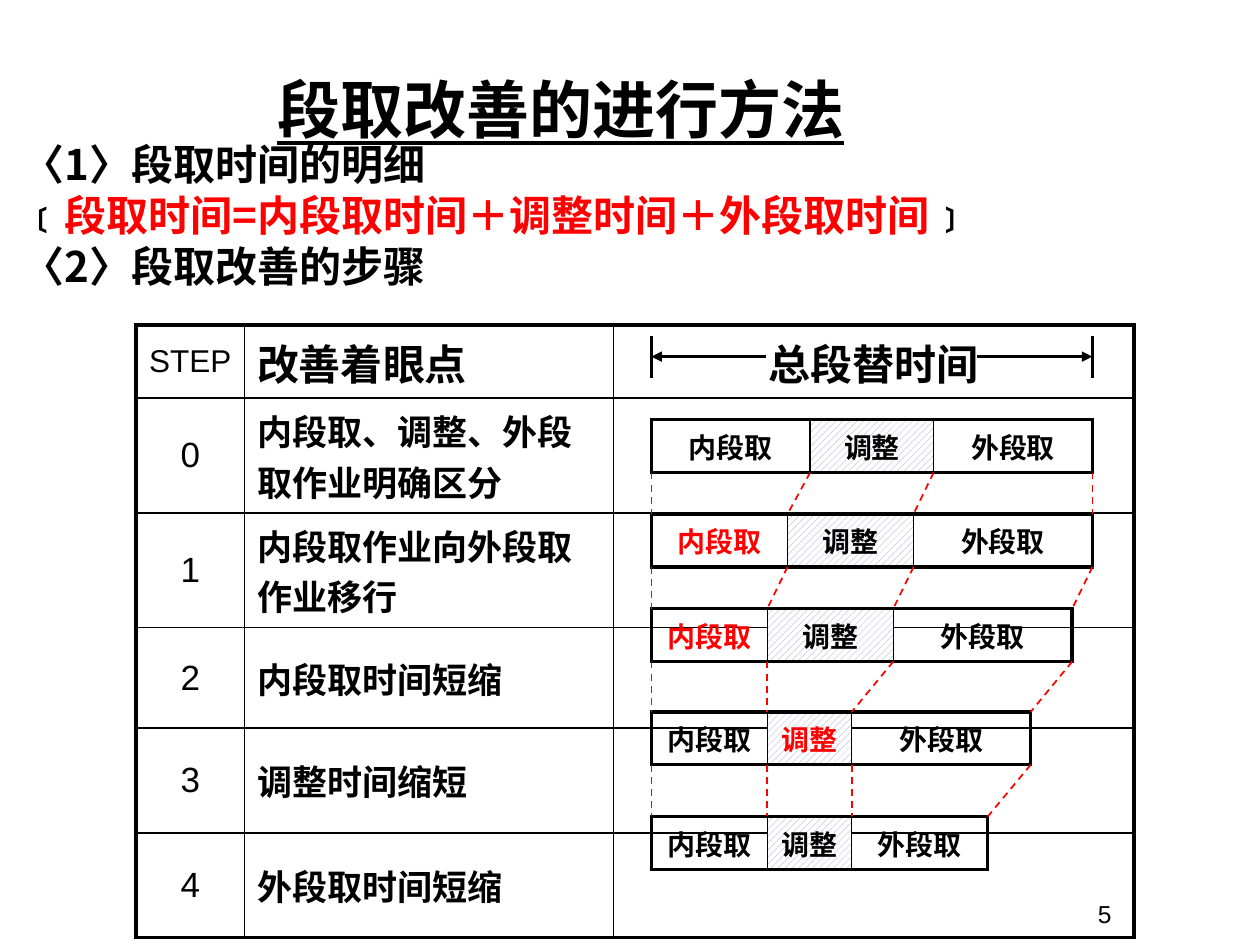
"""Build the slide on the steps of changeover improvement."""
from itertools import accumulate
from lxml import etree
from pptx import Presentation
from pptx import util as u
from pptx.dml.color import RGBColor
from pptx.enum import dml, shapes, text
from pptx.oxml import ns

BLACK = RGBColor(0, 0, 0)
RED = RGBColor(255, 0, 0)
WHITE = RGBColor(255, 255, 255)
HATCH = RGBColor(0x99, 0x99, 0xCC)
SANS, CJK = "Arial", "Noto Sans CJK SC"
NO_GRID = "{2D5ABB26-0587-4C30-8999-92F81FD0307C}"
LEFT, MID, RIGHT = text.PP_ALIGN.LEFT, text.PP_ALIGN.CENTER, text.PP_ALIGN.RIGHT

TITLE = "段取改善的进行方法"
INTRO = [
    [("〈1〉段取时间的明细", BLACK)],
    [("﹝", BLACK), ("段取时间=内段取时间＋调整时间＋外段取时间", RED), ("﹞", BLACK)],
    [("〈2〉段取改善的步骤", BLACK)],
]
HEAD = ("STEP", "改善着眼点", "总段替时间")
STEPS = [
    "内段取、调整、外段取作业明确区分",
    "内段取作业向外段取作业移行",
    "内段取时间短缩",
    "调整时间缩短",
    "外段取时间短缩",
]
COLS = (0.86, 2.93, 4.13)
ROWS = (0.58, 0.91, 0.91, 0.8, 0.83, 0.83)
PARTS = ("内段取", "调整", "外段取")
BARS = [
    (3.33, (1.26, 0.98, 1.26), None),
    (4.08, (1.08, 1, 1.42), 0),
    (4.83, (0.92, 1, 1.42), 0),
    (5.65, (0.92, 0.67, 1.42), 1),
    (6.48, (0.92, 0.67, 1.08), None),
]
BAR_X, BAR_H = 5.17, 0.42
SPAN_END, SPAN_Y = 8.67, 2.83


def write(frame, lines, size, font=SANS, bold=False, line=False, align=LEFT,
          anchor=text.MSO_ANCHOR.MIDDLE, gap=0, pitch=None):
    """Fill a text frame with lines of (words, colour) runs."""
    frame.word_wrap = True
    frame.vertical_anchor = anchor
    for i, runs in enumerate(lines):
        para = frame.paragraphs[0] if i == 0 else frame.add_paragraph()
        para.alignment = align
        if pitch:
            para.line_spacing = pitch
        if i:
            para.space_before = u.Pt(gap)
        for words, color in runs:
            run = para.add_run()
            run.text = words
            run.font.size, run.font.bold = u.Pt(size), bold
            run.font.underline = line
            run.font.color.rgb = color
            run.font.name = font
            far = etree.SubElement(run.font._element, ns.qn("a:ea"))
            far.set("typeface", CJK)


def edge(cell, side, width):
    """Draw one black border of a cell."""
    props = cell._tc.get_or_add_tcPr()
    rule = etree.SubElement(props, ns.qn("a:ln" + side), w=str(u.Pt(width)))
    fill = etree.SubElement(rule, ns.qn("a:solidFill"))
    etree.SubElement(fill, ns.qn("a:srgbClr"), val=str(BLACK))


def grid(slide, x, y, cols, rows):
    """Add an unfilled table with a thick frame and thin inner rules."""
    size = [u.Inches(v) for v in (x, y, sum(cols), sum(rows))]
    frame = slide.shapes.add_table(len(rows), len(cols), *size)
    table = frame.table
    table.first_row = table.horz_banding = False
    frame._element.find(".//" + ns.qn("a:tableStyleId")).text = NO_GRID
    for c, width in enumerate(cols):
        table.columns[c].width = u.Inches(width)
    for r, height in enumerate(rows):
        table.rows[r].height = u.Inches(height)
        for c in range(len(cols)):
            cell = table.cell(r, c)
            cell.vertical_anchor = text.MSO_ANCHOR.MIDDLE
            outer = {"L": c == 0, "R": c == len(cols) - 1,
                     "T": r == 0, "B": r == len(rows) - 1}
            for side, thick in outer.items():
                edge(cell, side, 2.25 if thick else 1)
            cell.fill.background()
    return table


def link(slide, start, end, color=BLACK, width=1.5, dash=False, arrow=False):
    """Add a straight line between two points."""
    ends = [u.Inches(v) for v in (*start, *end)]
    conn = slide.shapes.add_connector(shapes.MSO_CONNECTOR.STRAIGHT, *ends)
    conn.line.color.rgb, conn.line.width = color, u.Pt(width)
    if dash:
        conn.line.dash_style = dml.MSO_LINE.DASH
    if arrow:
        etree.SubElement(conn.line._get_or_add_ln(), ns.qn("a:tailEnd"), type="triangle")
    etree.SubElement(conn._element.spPr, ns.qn("a:effectLst"))


def box(slide, *place):
    """Add a text box and give its frame."""
    return slide.shapes.add_textbox(*[u.Inches(v) for v in place]).text_frame


def main():
    """Lay out and save the slide."""
    deck = Presentation()
    deck.slide_width, deck.slide_height = u.Inches(10), u.Inches(7.5)
    slide = deck.slides.add_slide(deck.slide_layouts[5])

    title = slide.shapes.title
    title.left, title.top = u.Inches(2.1), u.Inches(0.5)
    title.width, title.height = u.Inches(5.79), u.Inches(0.72)
    write(title.text_frame, [[(TITLE, BLACK)]], 36, font=CJK, bold=True, line=True)

    write(box(slide, 6.42, 6.9, 2.5, 0.52), [[("5", BLACK)]], 14, align=RIGHT,
          anchor=text.MSO_ANCHOR.BOTTOM)

    table = grid(slide, 1.08, 2.58, COLS, ROWS)
    for c, (words, size, align) in enumerate(zip(HEAD, (18, 24, 24), (MID, LEFT, MID))):
        write(table.cell(0, c).text_frame, [[(words, BLACK)]], size, bold=c > 0, align=align)
    for n, words in enumerate(STEPS):
        write(table.cell(n + 1, 0).text_frame, [[(str(n), BLACK)]], 20, align=MID)
        write(table.cell(n + 1, 1).text_frame, [[(words, BLACK)]], 20, bold=True)

    for top, widths, hot in BARS:
        bar = grid(slide, BAR_X, top, widths, [BAR_H])
        for c, words in enumerate(PARTS):
            color = RED if c == hot else BLACK
            write(bar.cell(0, c).text_frame, [[(words, color)]], 16, bold=True, align=MID)
        fill = bar.cell(0, 1).fill
        fill.patterned()
        fill.pattern = dml.MSO_PATTERN.WIDE_UPWARD_DIAGONAL
        fill.fore_color.rgb, fill.back_color.rgb = HATCH, WHITE

    for x, inner in ((BAR_X, 6.08), (SPAN_END, 7.75)):
        link(slide, (x, 2.67), (x, 3))
        link(slide, (inner, SPAN_Y), (x, SPAN_Y), arrow=True)
    for (top, wide, _), (low, next_wide, _) in zip(BARS, BARS[1:]):
        marks = zip(accumulate(wide, initial=BAR_X), accumulate(next_wide, initial=BAR_X))
        for a, b in marks:
            link(slide, (a, top + BAR_H), (b, low), color=RED, width=1, dash=True)

    intro = box(slide, 0.08, 1.08, 9.67, 1.58)
    intro.margin_top = u.Inches(0.1)
    write(intro, INTRO, 24, font=CJK, bold=True, gap=5.9, pitch=0.8,
          anchor=text.MSO_ANCHOR.TOP)
    deck.save("out.pptx")


if __name__ == "__main__":
    main()
